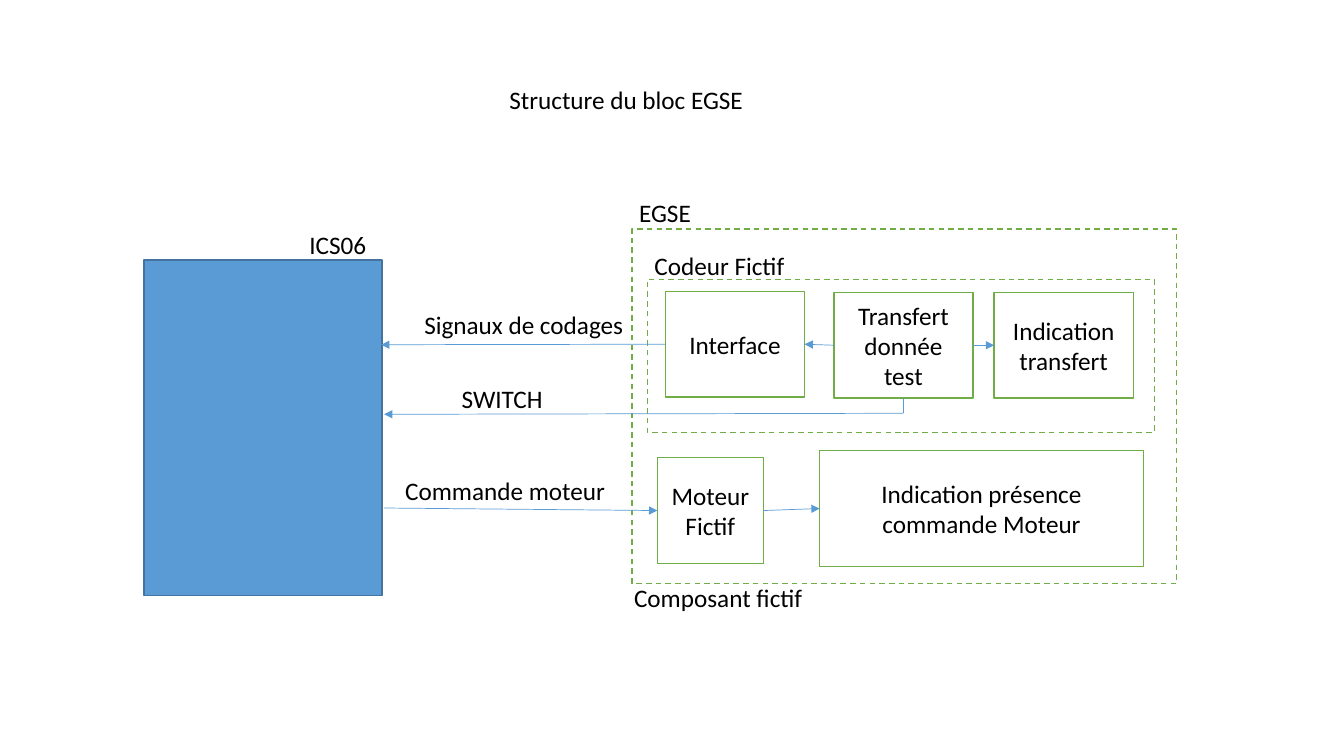
from dataclasses import dataclass
from typing import Any, Optional

import lxml.etree
import pptx
import pptx.dml.color
import pptx.enum.dml
import pptx.enum.shapes
import pptx.enum.text
import pptx.oxml
import pptx.oxml.ns
import pptx.util

EMU_PER_PX = 9144
BLUE, DARK_BLUE, GREEN, BLACK = "5B9BD5", "43739E", "70AD47", "000000"
TOP, LEFT, BOTTOM, RIGHT = range(4)
ALIGN = pptx.enum.text.PP_ALIGN


@dataclass(frozen=True)
class Block:
    left: int
    top: int
    width: int
    height: int
    text: str = ""
    dashed: bool = False
    fill: Optional[str] = None
    outline: str = GREEN


@dataclass(frozen=True)
class Label:
    text: str
    left: int
    top: int
    width: int
    align: Any = ALIGN.LEFT


@dataclass(frozen=True)
class Joint:
    block: Block
    side: int


@dataclass(frozen=True)
class Signal:
    begin: tuple[int, int]
    end: tuple[int, int]
    source: Optional[Joint] = None
    target: Optional[Joint] = None
    arrow: bool = True


def px(length: int) -> pptx.util.Emu:
    return pptx.util.Emu(length * EMU_PER_PX)


def colour(value: str) -> pptx.dml.color.RGBColor:
    return pptx.dml.color.RGBColor.from_string(value)


def write(frame: Any, text: str, align: Any) -> None:
    paragraph = frame.paragraphs[0]
    paragraph.text = text
    paragraph.alignment = align
    paragraph.font.name = "Calibri"
    paragraph.font.size = pptx.util.Pt(18)
    paragraph.font.color.rgb = colour(BLACK)


def draw_block(shapes: Any, block: Block) -> Any:
    shape = shapes.add_shape(
        pptx.enum.shapes.MSO_SHAPE.RECTANGLE,
        px(block.left), px(block.top), px(block.width), px(block.height),
    )
    shape.shadow.inherit = False
    if block.fill:
        shape.fill.solid()
        shape.fill.fore_color.rgb = colour(block.fill)
    else:
        shape.fill.background()
    shape.line.color.rgb = colour(block.outline)
    shape.line.width = pptx.util.Pt(1)
    if block.dashed:
        shape.line.dash_style = pptx.enum.dml.MSO_LINE.DASH
    if block.text:
        shape.text_frame.word_wrap = True
        write(shape.text_frame, block.text, ALIGN.CENTER)
    return shape


def draw_label(shapes: Any, label: Label) -> None:
    box = shapes.add_textbox(px(label.left), px(label.top), px(label.width), px(40))
    box.text_frame.word_wrap = False
    box.text_frame.auto_size = pptx.enum.text.MSO_AUTO_SIZE.SHAPE_TO_FIT_TEXT
    write(box.text_frame, label.text, label.align)


def draw_signal(shapes: Any, signal: Signal, drawn: dict[Block, Any]) -> None:
    connector = shapes.add_connector(
        pptx.enum.shapes.MSO_CONNECTOR.STRAIGHT,
        *map(px, signal.begin + signal.end),
    )
    if signal.source:
        connector.begin_connect(drawn[signal.source.block], signal.source.side)
    if signal.target:
        connector.end_connect(drawn[signal.target.block], signal.target.side)
    connector.line.color.rgb = colour(BLUE)
    connector.line.width = pptx.util.Pt(0.5)
    qn = pptx.oxml.ns.qn
    if signal.arrow:
        line = connector.line._get_or_add_ln()
        lxml.etree.SubElement(line, qn("a:tailEnd")).set("type", "triangle")
    lxml.etree.SubElement(connector._element.spPr, qn("a:effectLst"))


ICS06 = Block(143, 258, 236, 333, fill=BLUE, outline=DARK_BLUE)
EGSE = Block(627, 227, 540, 352, dashed=True)
PRESENCE = Block(813, 447, 321, 115, "Indication présence commande Moteur")
MOTOR = Block(652, 454, 105, 105, "Moteur Fictif")
ENCODER = Block(642, 277, 503, 152, dashed=True)
INTERFACE = Block(660, 289, 138, 105, "Interface")
TRANSFER = Block(827, 290, 138, 105, "Transfert donnée test")
INDICATION = Block(986, 290, 138, 105, "Indication transfert")

MAIN_BLOCKS = [ICS06, EGSE, PRESENCE, MOTOR]
ENCODER_BLOCKS = [ENCODER, INTERFACE, TRANSFER, INDICATION]

ENCODER_SIGNALS = [
    Signal((827, 342), (798, 341), Joint(TRANSFER, LEFT), Joint(INTERFACE, RIGHT)),
    Signal((965, 342), (986, 342), Joint(TRANSFER, RIGHT), Joint(INDICATION, LEFT)),
]
MAIN_SIGNALS = [
    Signal((381, 504), (652, 506), target=Joint(MOTOR, LEFT)),
    Signal((660, 341), (378, 342), source=Joint(INTERFACE, LEFT)),
    Signal((757, 506), (813, 504), Joint(MOTOR, RIGHT), Joint(PRESENCE, LEFT)),
    Signal((896, 395), (896, 410), source=Joint(TRANSFER, BOTTOM), arrow=False),
    Signal((896, 410), (381, 411)),
]
LABELS = [
    Label("Structure du bloc EGSE ", 494, 79, 260, ALIGN.CENTER),
    Label("ICS06", 297, 223, 77),
    Label("EGSE", 624, 191, 72),
    Label("Codeur Fictif", 638, 243, 151, ALIGN.CENTER),
    Label("Signaux de codages", 411, 302, 220),
    Label("SWITCH", 448, 375, 101),
    Label("Commande moteur", 392, 467, 221),
    Label("Composant fictif", 619, 573, 189),
]


def main() -> None:
    deck = pptx.Presentation()
    deck.slide_width, deck.slide_height = px(1333), px(750)
    slide = deck.slides.add_slide(deck.slide_layouts[6])
    drawn = {block: draw_block(slide.shapes, block) for block in MAIN_BLOCKS}
    encoder = slide.shapes.add_group_shape().shapes
    drawn.update({block: draw_block(encoder, block) for block in ENCODER_BLOCKS})
    for signal in ENCODER_SIGNALS:
        draw_signal(encoder, signal, drawn)
    for signal in MAIN_SIGNALS:
        draw_signal(slide.shapes, signal, drawn)
    for label in LABELS:
        draw_label(slide.shapes, label)
    deck.save("out.pptx")


if __name__ == "__main__":
    main()
